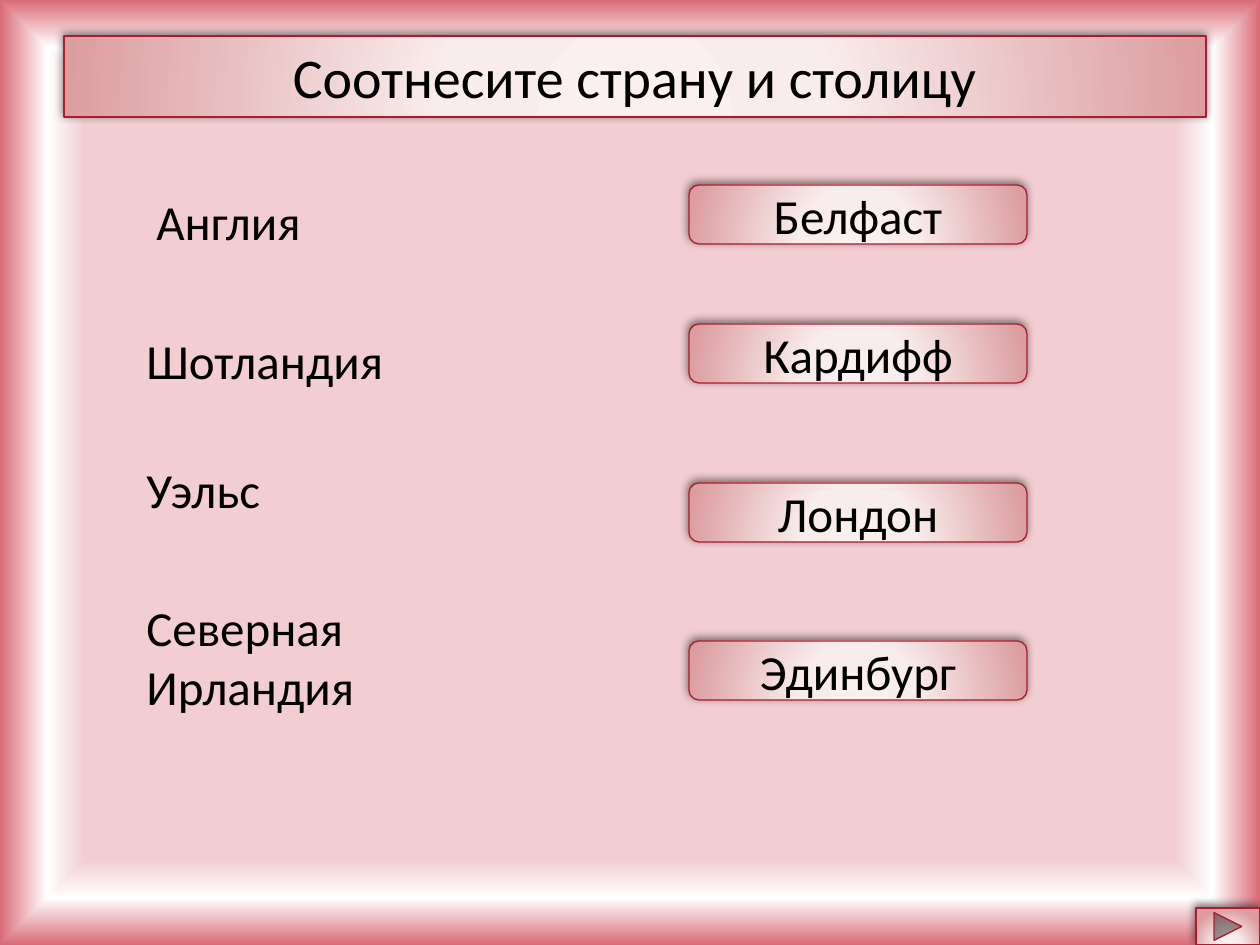
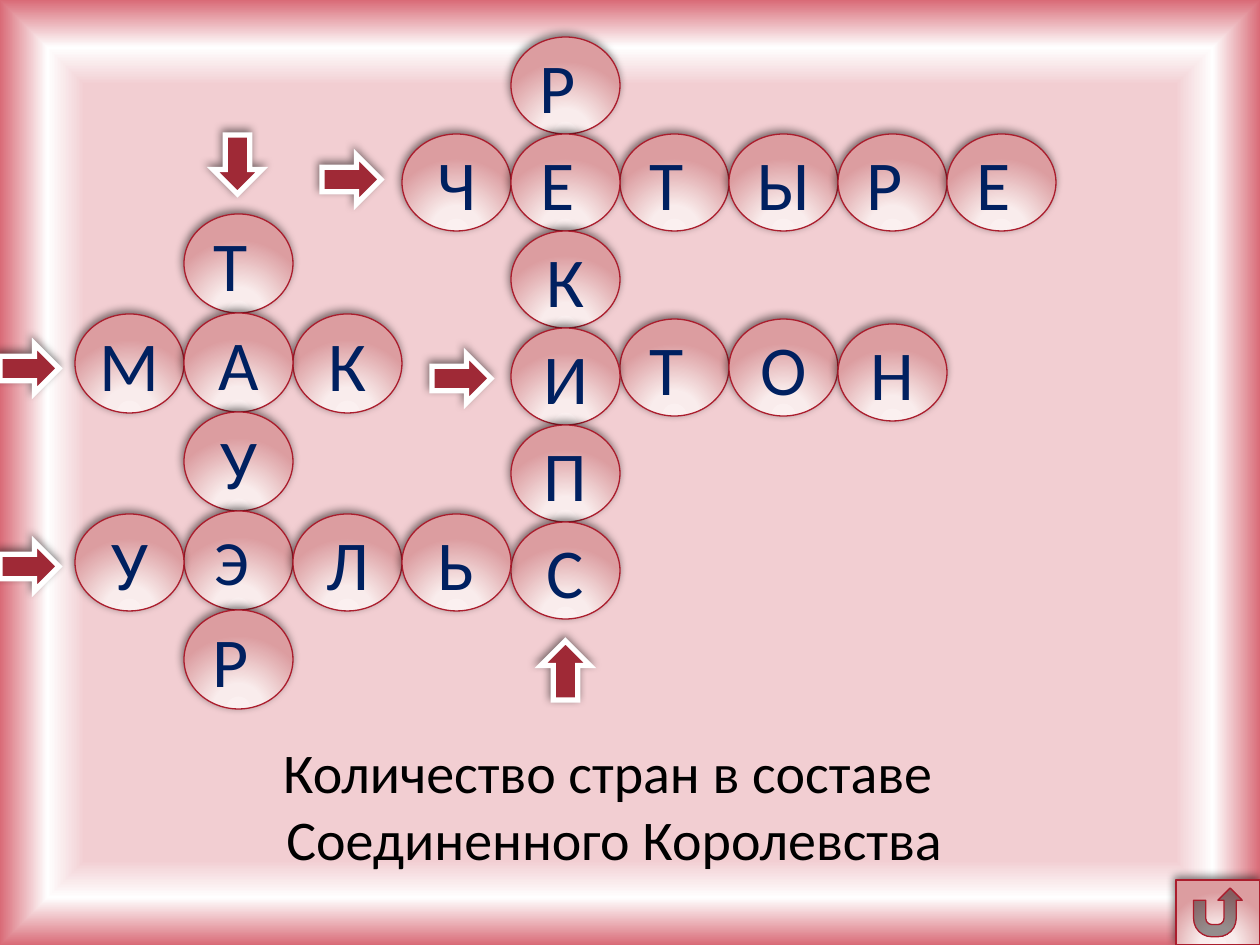
from lxml import etree
from pptx import Presentation
from pptx.dml.color import RGBColor
from pptx.enum.shapes import MSO_SHAPE as SHAPE
from pptx.enum.text import MSO_ANCHOR as ANCHOR, MSO_AUTO_SIZE as FIT, PP_ALIGN as ALIGN
from pptx.oxml.ns import qn
from pptx.util import Inches, Pt

PX = 7257  # EMU in one px, 126 px to the inch
NS = "http://schemas.openxmlformats.org/drawingml/2006/main"
COLORS = {"text": "000000", "letter": "002060", "edge": "AB1D2D",
          "arrow": "9F2936", "white": "FFFFFF"}
GRADIENT = """<a:gradFill xmlns:a="{}" rotWithShape="1"><a:gsLst>{}</a:gsLst>
<a:path path="{}"><a:fillToRect l="50000" t="{}" r="50000" b="{}"/></a:path></a:gradFill>"""
STOP = '<a:gs pos="{}"><a:srgbClr val="{}"/></a:gs>'
PAGE = (((82000, "F2CED2"), (90000, "FFFFFF"), (100000, "D96B77")), "rect", 50000, 50000)
GLOW = (((0, "FBF0F0"), (34000, "F9ECEC"), (100000, "DC9DA0")), "circle", 155000, -55000)
SHADOW = f"""<a:outerShdw xmlns:a="{NS}" blurRad="63500" dist="25400" dir="14700000"
rotWithShape="0"><a:srgbClr val="000000"><a:alpha val="50000"/></a:srgbClr></a:outerShdw>"""


def style(sp, box, look=None):
    """Place a shape; look is "glow" for pink panels or "arrow" for red arrows."""
    for name, value in zip(("left", "top", "width", "height"), box):
        setattr(sp, name, value * PX)
    if look is None:
        return
    glow = look == "glow"
    sp.fill.solid()
    sp.fill.fore_color.rgb = RGBColor.from_string(COLORS["arrow"])
    sp.line.color.rgb = RGBColor.from_string(COLORS["edge" if glow else "white"])
    sp.line.width = Pt(0.75 if glow else 3)
    sp.shadow.inherit = False
    spPr = sp._element.spPr
    spPr.find(qn("a:effectLst")).append(etree.fromstring(SHADOW))
    if glow:
        spPr.replace(spPr.find(qn("a:solidFill")), etree.fromstring(gradients["glow"]))
    else:
        etree.SubElement(spPr.find(qn("a:ln")), qn("a:miter"), lim="800000")


def write(sp, text, size, color="text", align=ALIGN.CENTER, anchor=ANCHOR.MIDDLE, wrap=True):
    tf = sp.text_frame
    tf.text = text
    frame = {"word_wrap": wrap, "vertical_anchor": anchor, "auto_size": FIT.NONE}
    for name, value in frame.items():
        setattr(tf, name, value)
    for p in tf.paragraphs:
        p.alignment = align
        for r in p.runs:
            for name, value in {"name": "Calibri", "size": Pt(size)}.items():
                setattr(r.font, name, value)
            r.font.color.rgb = RGBColor.from_string(COLORS[color])


gradients = {}
for key, (stops, path, top, bottom) in {"page": PAGE, "glow": GLOW}.items():
    stop_xml = "".join(STOP.format(*stop) for stop in stops)
    gradients[key] = GRADIENT.format(NS, stop_xml, path, top, bottom)

prs = Presentation()
prs.slide_width, prs.slide_height = Inches(10), Inches(7.5)

# Shared background on the master
master = prs.slide_master
master.background.fill.solid()
solid = master._element.cSld.find(".//" + qn("a:solidFill"))
solid.getparent().replace(solid, etree.fromstring(gradients["page"]))

# Slide 1: countries and capitals
s = prs.slides.add_slide(prs.slide_layouts[5])
style(s.shapes.title, (64, 36, 1142, 81), "glow")
write(s.shapes.title, "Соотнесите страну и столицу", 32)

countries = [("Англия", 144, 185, 72), ("Шотландия", 134, 324, 72),
             ("Уэльс", 134, 453, 72), ("Северная Ирландия", 134, 591, 131)]
for country, left, top, height in countries:
    sp = s.shapes.add_textbox(0, 0, 0, 0)
    style(sp, (left, top, 310, height))
    write(sp, country, 28, align=ALIGN.LEFT, anchor=ANCHOR.TOP)

capitals = [("Белфаст", 185), ("Кардифф", 324), ("Лондон", 483), ("Эдинбург", 641)]
for capital, top in capitals:
    sp = s.shapes.add_shape(SHAPE.ROUNDED_RECTANGLE, 0, 0, 0, 0)
    style(sp, (689, top, 338, 59), "glow")
    write(sp, capital, 28)

sp = s.shapes.add_shape(SHAPE.ACTION_BUTTON_FORWARD_OR_NEXT, 0, 0, 0, 0)
style(sp, (1196, 908, 64, 37), "glow")

# Slide 2: crossword with its question
s = prs.slides.add_slide(prs.slide_layouts[5])
style(s.shapes.title, (54, 731, 1121, 149))
write(s.shapes.title, "Количество стран в составе \nСоединенного Королевства", 32,
      anchor=ANCHOR.TOP)

# Words: letters (_ is a crossing), column, top, step across, step down, height
CELL = 109
words = [("М_К", 0, 314, 1, 0, 99), ("ТАУЭР", 1, 214, 0, 99, 99),
         ("Ч_ТЫРЕ", 3, 134, 1, 0, 97), ("ТО", 5, 319, 1, 0, 97),
         ("Н", 7, 324, 1, 0, 97), ("РЕКИПС", 4, 37, 0, 97, 97),
         ("У_ЛЬ", 0, 514, 1, 0, 97)]
for word, column, top, across, down, height in words:
    for i, letter in enumerate(word):
        if letter == "_":
            continue
        sp = s.shapes.add_shape(SHAPE.OVAL, 0, 0, 0, 0)
        style(sp, (75 + CELL * (column + i * across), top + i * down, CELL, height), "glow")
        wide = letter in "МЫ"
        write(sp, letter if wide else letter + " ", 36 if letter == "Э" else 40,
              "letter", wrap=not wide)

# Arrows pointing at the words
arrows = [(SHAPE.DOWN_ARROW, 213, 135, 49, 59), (SHAPE.RIGHT_ARROW, 0, 344, 59, 49),
          (SHAPE.RIGHT_ARROW, 432, 354, 59, 49), (SHAPE.RIGHT_ARROW, 0, 542, 59, 49),
          (SHAPE.RIGHT_ARROW, 322, 155, 59, 49), (SHAPE.UP_ARROW, 541, 641, 49, 59)]
for kind, *box in arrows:
    style(s.shapes.add_shape(kind, 0, 0, 0, 0), box, "arrow")

sp = s.shapes.add_shape(SHAPE.ACTION_BUTTON_RETURN, 0, 0, 0, 0)
style(sp, (1176, 880, 84, 65), "glow")

prs.save("out.pptx")
